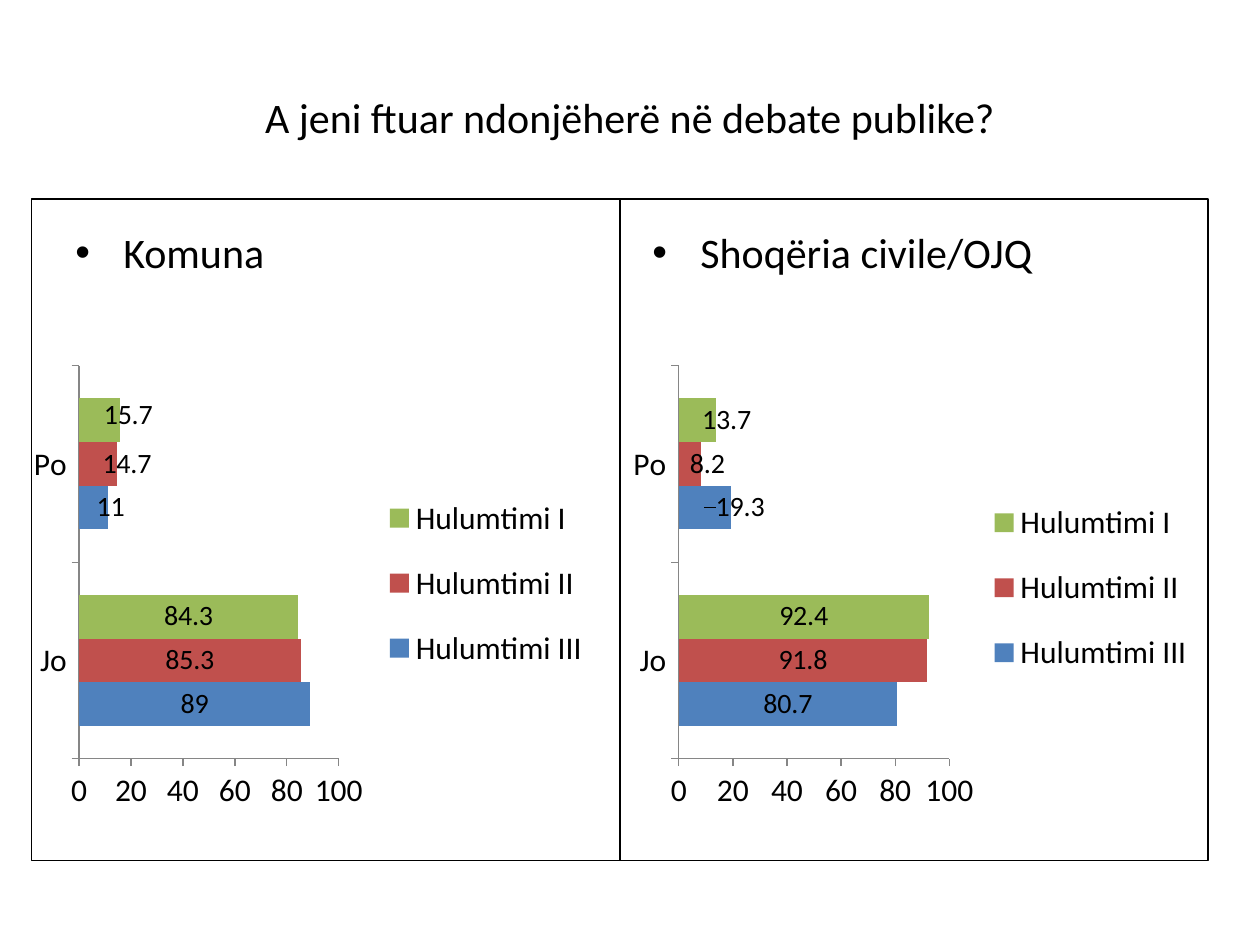
"""Build a slide comparing two survey bar charts on public debates."""
import lxml.etree
import pptx
import pptx.chart.data
import pptx.dml.color
import pptx.enum.chart
import pptx.enum.shapes
import pptx.enum.text
import pptx.oxml.ns
import pptx.util

Inches = pptx.util.Inches
Pt = pptx.util.Pt
qn = pptx.oxml.ns.qn
BLACK = pptx.dml.color.RGBColor(0x00, 0x00, 0x00)
WHITE = pptx.dml.color.RGBColor(0xFF, 0xFF, 0xFF)
GRAY = pptx.dml.color.RGBColor(0x86, 0x86, 0x86)
BLUE = pptx.dml.color.RGBColor(0x4F, 0x81, 0xBD)
RED = pptx.dml.color.RGBColor(0xC0, 0x50, 0x4D)
GREEN = pptx.dml.color.RGBColor(0x9B, 0xBB, 0x59)

SERIES = [("Hulumtimi III", BLUE), ("Hulumtimi II", RED), ("Hulumtimi I", GREEN)]
CATEGORIES = ["Jo", "Po"]
PANELS = [
    {
        "heading": "Shoqëria civile/OJQ",
        "frame_left": 4.92, "text_left": 5.08, "chart_left": 4.92, "chart_width": 4.67,
        "values": [(80.7, 19.3), (91.8, 8.2), (92.4, 13.7)],
        "label_shifts": [(0.06, 0), (0.03, 0), (0.05, 0)],
        "plot": {"x": 0.1, "y": 0.02, "w": 0.46, "h": 0.85},
        "legend": {"x": 0.62, "y": 0.26, "w": 0.36, "h": 0.48},
    },
    {
        "heading": "Komuna",
        "frame_left": 0.25, "text_left": 0.5, "chart_left": 0.17, "chart_width": 4.58,
        "values": [(89, 11), (85.3, 14.7), (84.3, 15.7)],
        "label_shifts": [(0.03, 0), (0.05, 0), (0.05, -0.01)],
        "plot": {"x": 0.1, "y": 0.02, "w": 0.45, "h": 0.85},
        "legend": {"x": 0.62, "y": 0.25, "w": 0.37, "h": 0.48},
    },
]
FONT = {"name": "Calibri", "size": Pt(24)}
CHART_FONT = {"name": "Calibri", "size": Pt(18)}
LABELS = {"show_value": True, "position": pptx.enum.chart.XL_LABEL_POSITION.CENTER}
AXIS = {
    "has_major_gridlines": False,
    "major_tick_mark": pptx.enum.chart.XL_TICK_MARK.OUTSIDE,
    "minor_tick_mark": pptx.enum.chart.XL_TICK_MARK.NONE,
}
SCALE = {"minimum_scale": 0, "maximum_scale": 100, "major_unit": 20}
PLOT = {"gap_width": 150, "overlap": 0, "vary_by_categories": False}
LEGEND = {
    "position": pptx.enum.chart.XL_LEGEND_POSITION.RIGHT,
    "include_in_layout": False,
}


def apply_format(target, values):
    for name, value in values.items():
        setattr(target, name, value)


def set_layout(parent, index, values):
    for existing in parent.findall(qn("c:layout")):
        parent.remove(existing)
    layout = lxml.etree.Element(qn("c:layout"))
    manual = lxml.etree.SubElement(layout, qn("c:manualLayout"))
    for name, value in values.items():
        lxml.etree.SubElement(manual, qn(f"c:{name}")).set("val", str(value))
    parent.insert(index, layout)


presentation = pptx.Presentation()
apply_format(presentation, {"slide_width": Inches(10), "slide_height": Inches(7.5)})
slide = presentation.slides.add_slide(presentation.slide_layouts[6])

for panel in PANELS:
    frame = slide.shapes.add_shape(
        pptx.enum.shapes.MSO_SHAPE.RECTANGLE,
        Inches(panel["frame_left"]), Inches(1.58), Inches(4.67), Inches(5.25),
    )
    frame.shadow.inherit = False
    frame.fill.solid()
    frame.fill.fore_color.rgb = WHITE
    frame.line.color.rgb = BLACK
    frame.line.width = Pt(1)

texts = [("A jeni ftuar ndonjëherë në debate publike?", 0.5, 0.3, 9, 1.25, False)]
for panel in reversed(PANELS):
    texts.append((panel["heading"], panel["text_left"], 1.75, 4.42, 4.95, True))

for text, left, top, width, height, bulleted in texts:
    box = slide.shapes.add_textbox(Inches(left), Inches(top), Inches(width), Inches(height))
    box.text_frame.word_wrap = True
    paragraph = box.text_frame.paragraphs[0]
    run = paragraph.add_run()
    run.text = text
    apply_format(run.font, FONT)
    run.font.color.rgb = BLACK
    if bulleted:
        paragraph.space_before = Pt(4.8)
        properties = paragraph._p.get_or_add_pPr()
        properties.set("marL", str(Inches(0.38)))
        properties.set("indent", str(Inches(-0.38)))
        lxml.etree.SubElement(properties, qn("a:buFont")).set("typeface", "Arial")
        lxml.etree.SubElement(properties, qn("a:buChar")).set("char", "•")
    else:
        box.text_frame.vertical_anchor = pptx.enum.text.MSO_ANCHOR.MIDDLE
        paragraph.alignment = pptx.enum.text.PP_ALIGN.CENTER

for panel in PANELS:
    chart_data = pptx.chart.data.CategoryChartData()
    chart_data.categories = CATEGORIES
    for (name, color), values in zip(SERIES, panel["values"]):
        chart_data.add_series(name, values)
    chart = slide.shapes.add_chart(
        pptx.enum.chart.XL_CHART_TYPE.BAR_CLUSTERED,
        Inches(panel["chart_left"]), Inches(2.83),
        Inches(panel["chart_width"]), Inches(3.67), chart_data,
    ).chart
    apply_format(chart, {"has_title": False, "has_legend": True})
    apply_format(chart.font, CHART_FONT)
    chart.font.color.rgb = BLACK
    apply_format(chart.legend, LEGEND)
    apply_format(chart.plots[0], PLOT)
    apply_format(chart.value_axis, SCALE)
    for axis in (chart.category_axis, chart.value_axis):
        apply_format(axis, AXIS)
        axis.format.line.color.rgb = GRAY
        axis.format.line.width = Pt(0.75)

    edges = {"xMode": "edge", "yMode": "edge"}
    plot_area = chart._chartSpace.find(".//" + qn("c:plotArea"))
    set_layout(plot_area, 0, {"layoutTarget": "inner", **edges, **panel["plot"]})
    legend = chart._chartSpace.find(".//" + qn("c:legend"))
    set_layout(legend, 1, {**edges, **panel["legend"]})

    for series, (name, color), shift in zip(chart.plots[0].series, SERIES, panel["label_shifts"]):
        series.format.fill.solid()
        series.format.fill.fore_color.rgb = color
        apply_format(series.data_labels, LABELS)
        series.data_labels.font.size = Pt(16)
        label = series.points[1].data_label
        label.position = LABELS["position"]
        label.font.size = Pt(16)
        element = series._element.find(".//" + qn("c:dLbl"))
        set_layout(element, 1, dict(zip("xy", shift)))

presentation.save("out.pptx")
